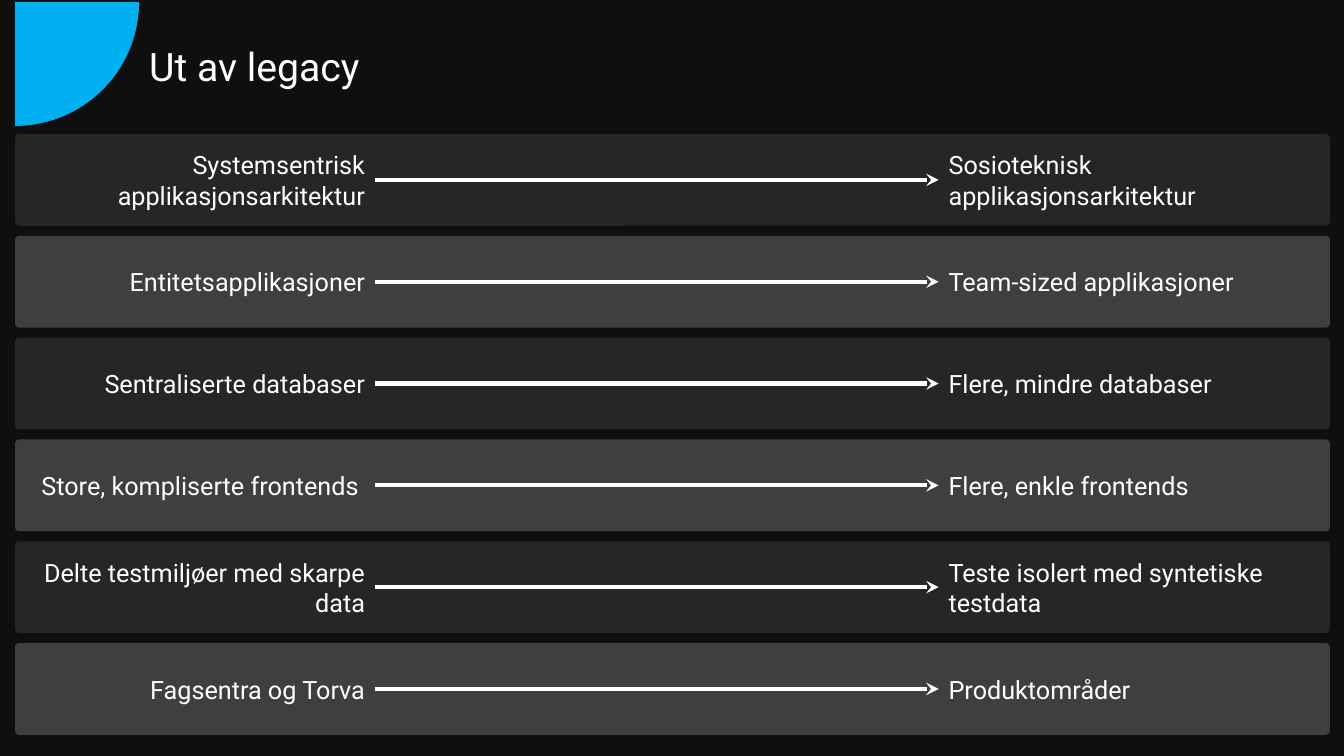
"""Build the slide "Ut av legacy": six arrows from old to new ways of working."""
import math

import pptx
import pptx.dml.color
import pptx.enum.shapes
import pptx.enum.text
import pptx.oxml
import pptx.oxml.ns
import pptx.util
from pptx.util import Inches

ALIGN = pptx.enum.text.PP_ALIGN
ANCHOR = pptx.enum.text.MSO_ANCHOR
SHAPES = pptx.enum.shapes.MSO_SHAPE


def paint(color_format, hex_code):
    color_format.rgb = pptx.dml.color.RGBColor.from_string(hex_code)


def write(box, text, size=18, color="FFFFFF", align=ALIGN.LEFT, anchor=ANCHOR.MIDDLE):
    frame = box.text_frame
    frame.word_wrap = True
    frame.auto_size = pptx.enum.text.MSO_AUTO_SIZE.NONE
    frame.vertical_anchor = anchor
    para = frame.paragraphs[0]
    para.alignment = align
    span = para.add_run()
    span.text = text
    span.font.name = "Roboto"
    span.font.size = pptx.util.Pt(size)
    paint(span.font.color, color)


CHANGES = [
    ("Systemsentrisk applikasjonsarkitektur", "Sosioteknisk applikasjonsarkitektur"),
    ("Entitetsapplikasjoner", "Team-sized applikasjoner"),
    ("Sentraliserte databaser", "Flere, mindre databaser"),
    ("Store, kompliserte frontends ", "Flere, enkle frontends"),
    ("Delte testmiljøer med skarpe data", "Teste isolert med syntetiske testdata"),
    ("Fagsentra og Torva", "Produktområder"),
]
ROW_FILLS = ["262626", "3F3F3F"]
MARGIN, ROW_WIDTH, ROW_HEIGHT = 0.15, 13.04, 0.91
FIRST_ROW, ROW_STEP = 1.33, 1.01
ARROW_START, ARROW_END, LABEL_HEIGHT = 3.72, 9.31, 0.4

deck = pptx.Presentation()
deck.slide_width, deck.slide_height = Inches(13.33), Inches(7.5)
page = deck.slides.add_slide(deck.slide_layouts[5])
page.background.fill.solid()
paint(page.background.fill.fore_color, "0F0F0F")

title = page.shapes.title
title.left, title.top = Inches(1.38), Inches(0.37)
title.width, title.height = Inches(2.41), Inches(0.57)
write(title, "Ut av legacy", size=28, anchor=ANCHOR.TOP)

corner_top, radius, steps = 0.02, 1.23, 60
arc = []
for step in range(steps + 1):
    angle = math.pi / 2 * step / steps
    arc.append((Inches(MARGIN + radius * math.cos(angle)),
                Inches(corner_top + radius * math.sin(angle))))
outline = page.shapes.build_freeform(Inches(MARGIN), Inches(corner_top))
outline.add_line_segments(arc, close=True)
quarter = outline.convert_to_shape()
quarter.shadow.inherit = False
quarter.fill.solid()
paint(quarter.fill.fore_color, "00B0F0")
quarter.line.fill.background()

for index, (before, after) in enumerate(CHANGES):
    top = FIRST_ROW + index * ROW_STEP
    row = page.shapes.add_shape(SHAPES.ROUNDED_RECTANGLE, Inches(MARGIN), Inches(top),
                                Inches(ROW_WIDTH), Inches(ROW_HEIGHT))
    row.adjustments[0] = 0.043
    row.shadow.inherit = False
    row.fill.solid()
    paint(row.fill.fore_color, ROW_FILLS[index % 2])
    row.line.fill.background()

    group = page.shapes.add_group_shape()
    middle = top + ROW_HEIGHT / 2
    label_top = Inches(middle - LABEL_HEIGHT / 2)
    old_label = group.shapes.add_textbox(Inches(MARGIN), label_top,
                                         Inches(ARROW_START - MARGIN), Inches(LABEL_HEIGHT))
    write(old_label, before, align=ALIGN.RIGHT)
    new_label = group.shapes.add_textbox(Inches(ARROW_END), label_top,
                                         Inches(MARGIN + ROW_WIDTH - ARROW_END),
                                         Inches(LABEL_HEIGHT))
    write(new_label, after)

    arrow = group.shapes.add_connector(pptx.enum.shapes.MSO_CONNECTOR.STRAIGHT,
                                       Inches(ARROW_START), Inches(middle),
                                       Inches(ARROW_END), Inches(middle))
    arrow.begin_connect(old_label, 3)
    arrow.end_connect(new_label, 1)
    arrow.line.width = pptx.util.Pt(3)
    paint(arrow.line.color, "FFFFFF")
    properties = arrow.element.spPr
    head = pptx.oxml.parse_xml(
        f'<a:tailEnd {pptx.oxml.ns.nsdecls("a")} type="stealth"/>')
    properties.find(pptx.oxml.ns.qn("a:ln")).append(head)
    properties.append(pptx.oxml.parse_xml(f'<a:effectLst {pptx.oxml.ns.nsdecls("a")}/>'))

deck.save("out.pptx")
